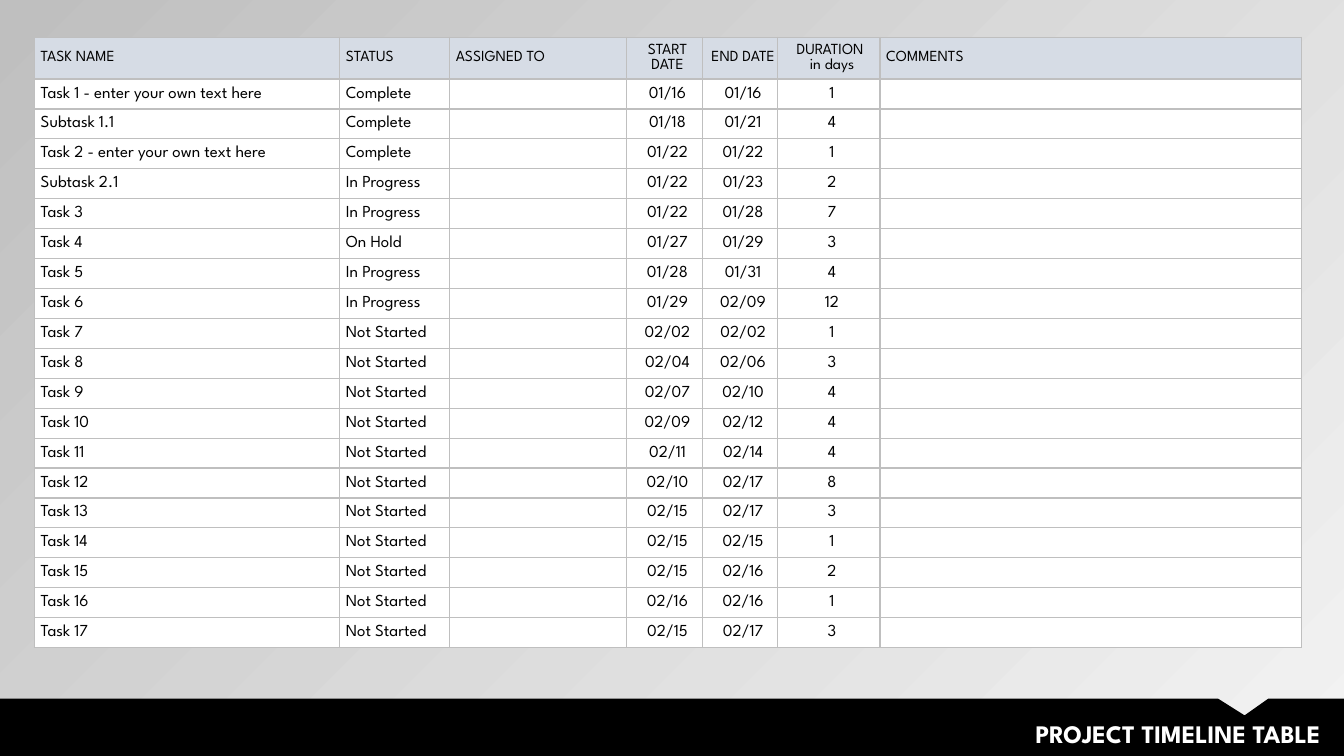
from lxml import etree
from pptx import Presentation
from pptx.dml.color import RGBColor
from pptx.enum.text import MSO_ANCHOR, MSO_AUTO_SIZE, PP_ALIGN
from pptx.oxml.ns import qn
from pptx.util import Pt

LEFT, CENTER, RIGHT = PP_ALIGN.LEFT, PP_ALIGN.CENTER, PP_ALIGN.RIGHT
MIDDLE = MSO_ANCHOR.MIDDLE
FIT_SHAPE = MSO_AUTO_SIZE.SHAPE_TO_FIT_TEXT
FONT = "League Spartan"
BLACK, WHITE, GRID, HEADER_FILL = "000000", "FFFFFF", "BFBFBF", "D6DCE5"
BORDER_SIDES = ("a:lnL", "a:lnR", "a:lnT", "a:lnB")

HEADERS = ["TASK NAME", "STATUS", "ASSIGNED TO", "START DATE", "END DATE",
           "DURATION \nin days", "COMMENTS"]
TASKS = [
    ("Task 1 - enter your own text here", "Complete", "01/16", "01/16", 1),
    ("Subtask 1.1", "Complete", "01/18", "01/21", 4),
    ("Task 2 - enter your own text here", "Complete", "01/22", "01/22", 1),
    ("Subtask 2.1", "In Progress", "01/22", "01/23", 2),
    ("Task 3", "In Progress", "01/22", "01/28", 7),
    ("Task 4", "On Hold", "01/27", "01/29", 3),
    ("Task 5", "In Progress", "01/28", "01/31", 4),
    ("Task 6", "In Progress", "01/29", "02/09", 12),
    ("Task 7", "Not Started", "02/02", "02/02", 1),
    ("Task 8", "Not Started", "02/04", "02/06", 3),
    ("Task 9", "Not Started", "02/07", "02/10", 4),
    ("Task 10", "Not Started", "02/09", "02/12", 4),
    ("Task 11", "Not Started", "02/11", "02/14", 4),
    ("Task 12", "Not Started", "02/10", "02/17", 8),
    ("Task 13", "Not Started", "02/15", "02/17", 3),
    ("Task 14", "Not Started", "02/15", "02/15", 1),
    ("Task 15", "Not Started", "02/15", "02/16", 2),
    ("Task 16", "Not Started", "02/16", "02/16", 1),
    ("Task 17", "Not Started", "02/15", "02/17", 3),
]
COLUMN_WIDTHS = [218, 78.5, 126.5, 54, 54, 73, 301]
COLUMN_ALIGNMENTS = [LEFT, LEFT, LEFT, CENTER, CENTER, CENTER, LEFT]
HEADER_HEIGHT, ROW_HEIGHT = 29.7, 21.4


def rgb(value):
    return RGBColor.from_string(value)


def format_text(text_frame, size, color, alignment, bold=False):
    for paragraph in text_frame.paragraphs:
        paragraph.alignment = alignment
        for run in paragraph.runs:
            run.font.name = FONT
            run.font.size = Pt(size)
            run.font.bold = bold
            run.font.color.rgb = rgb(color)
        if not paragraph.runs:
            # An empty cell needs its own text size, or the row grows
            etree.SubElement(paragraph._p, qn("a:endParaRPr"), sz=str(size * 100))


presentation = Presentation()
presentation.slide_width, presentation.slide_height = Pt(960), Pt(540)
slide = presentation.slides.add_slide(presentation.slide_layouts[6])

# Background gradient, light at the bottom right
background = slide.background.fill
background.gradient()
background.gradient_angle = 135
for stop, color in zip(background.gradient_stops, ("F2F2F2", "BFBFBF")):
    stop.color.rgb = rgb(color)
light_stop = slide.element.xpath(".//p:bg//a:gs/a:srgbClr")[0]
etree.SubElement(light_stop, qn("a:alpha"), val="40000")

# Task table
rows = [HEADERS] + [(name, status, "", start, end, str(days), "")
                    for name, status, start, end, days in TASKS]
table_height = HEADER_HEIGHT + ROW_HEIGHT * len(TASKS)
table = slide.shapes.add_table(len(rows), len(HEADERS), Pt(24.6), Pt(26.8),
                               Pt(sum(COLUMN_WIDTHS)), Pt(table_height)).table
for column, width in zip(table.columns, COLUMN_WIDTHS):
    column.width = Pt(width)

for row_index, values in enumerate(rows):
    is_header = row_index == 0
    table.rows[row_index].height = Pt(HEADER_HEIGHT if is_header else ROW_HEIGHT)
    for column_index, value in enumerate(values):
        cell = table.cell(row_index, column_index)
        cell.text_frame.text = value
        cell.vertical_anchor = MIDDLE
        cell.margin_left = Pt(4.5)
        cell.margin_right = cell.margin_top = cell.margin_bottom = 0
        format_text(cell.text_frame, 11 if is_header else 12, BLACK,
                    COLUMN_ALIGNMENTS[column_index])
        # Borders come before the fill in the cell properties
        properties = cell._tc.get_or_add_tcPr()
        for side in BORDER_SIDES:
            border = etree.SubElement(properties, qn(side), w=str(Pt(1)))
            line_fill = etree.SubElement(border, qn("a:solidFill"))
            etree.SubElement(line_fill, qn("a:srgbClr"), val=GRID)
        cell.fill.solid()
        cell.fill.fore_color.rgb = rgb(HEADER_FILL if is_header else WHITE)

# Footer band with a notch
builder = slide.shapes.build_freeform(0, 499, scale=Pt(1))
builder.add_line_segments([(870.5, 499), (889, 511.2), (906.5, 499), (960, 499),
                           (960, 540), (0, 540)], close=True)
footer = builder.convert_to_shape()
footer.shadow.inherit = False
footer.fill.solid()
footer.fill.fore_color.rgb = rgb(BLACK)
footer.line.fill.background()

# Slide title
title = slide.shapes.add_textbox(Pt(298), Pt(509.8), Pt(652.4), Pt(29))
title.text_frame.word_wrap = True
title.text_frame.auto_size = FIT_SHAPE
title.text_frame.text = "PROJECT TIMELINE TABLE"
format_text(title.text_frame, 18, WHITE, RIGHT, bold=True)

presentation.save("out.pptx")
